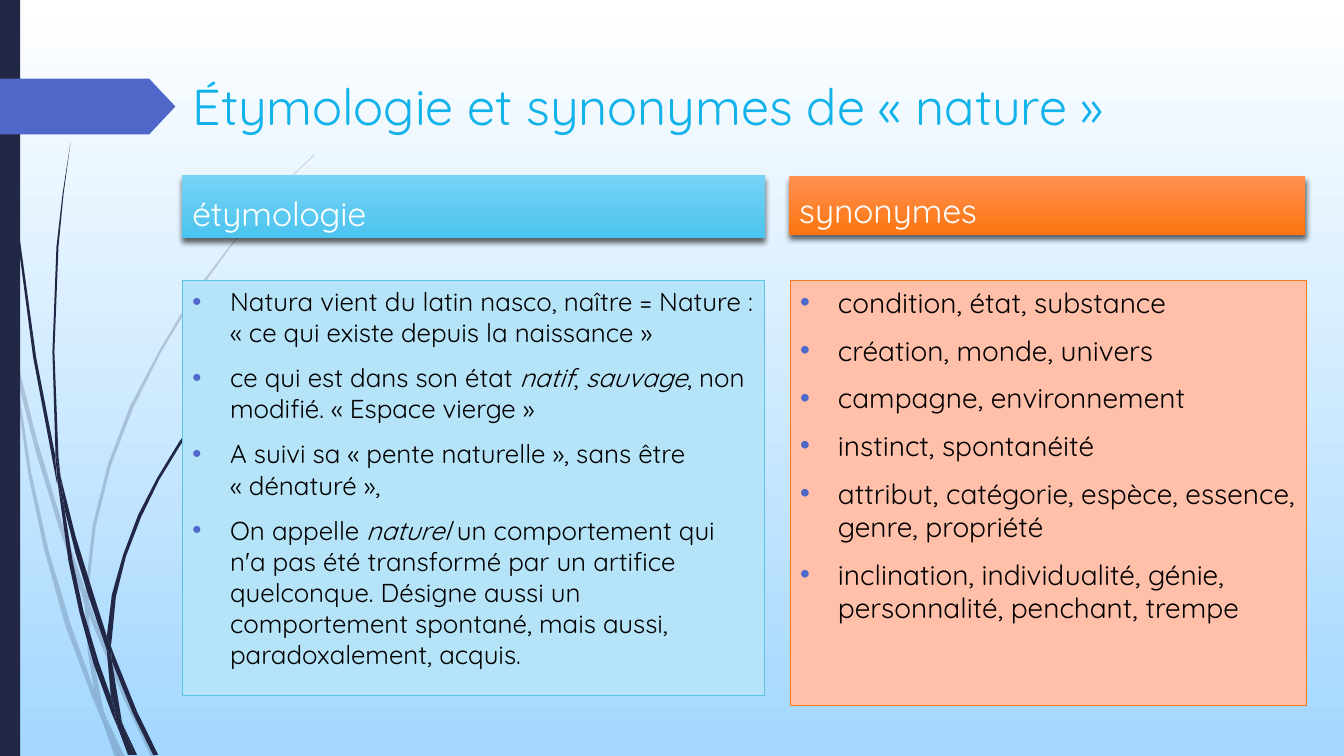
"""Build the slide on the etymology and synonyms of « nature »."""
from lxml import etree
from pptx import Presentation
from pptx.dml.color import RGBColor
from pptx.enum import shapes as kinds, text as te
from pptx.oxml import ns
from pptx.util import Pt

FONT = "Quicksand"
HARD = chr(160)
GRID = Pt(0.72)
NAVY = RGBColor(0x21, 0x27, 0x45)
INDIGO = RGBColor(0x4E, 0x67, 0xC8)
CYAN = RGBColor(0x12, 0xB2, 0xEB)
WHITE = RGBColor(0xFF, 0xFF, 0xFF)
BLACK = RGBColor(0, 0, 0)
SKY = (WHITE, RGBColor(0xA3, 0xD7, 0xFF))
BLUES = (RGBColor(0x78, 0xD3, 0xF5), RGBColor(0x4B, 0xC4, 0xEF))
REDS = (RGBColor(0xFF, 0x91, 0x51), RGBColor(0xFD, 0x75, 0x10))
ICE = RGBColor(0xB5, 0xE3, 0xF8)
ICE_EDGE = RGBColor(0x5A, 0xC3, 0xE8)
PEACH = RGBColor(0xFF, 0xBF, 0xA9)
PEACH_EDGE = RGBColor(0xF4, 0x7A, 0x20)

PALE_BLADES = [
    [(11, 350), (9, 322), (0, 282), (0, 299), (10, 344)],
    [(58, 522), (84, 599), (85, 586), (62, 520), (36, 434), (14, 345), (17, 376),
     (36, 450)],
    [(92, 607), (88, 596), (88, 610), (123, 694), (150, 751), (155, 751), (127, 692)],
    [(119, 751), (124, 751), (105, 711)],
    [(93, 683), (70, 619), (48, 545), (31, 469), (17, 376), (11, 350), (28, 470),
     (44, 546), (65, 621), (92, 693), (101, 714), (99, 707)],
    [(84, 599), (87, 646), (93, 683), (96, 692), (105, 711), (103, 706), (91, 646),
     (88, 610), (88, 608)],
    [(88, 584), (95, 522), (110, 462), (132, 405), (160, 349), (192, 296), (229, 245),
     (268, 198), (290, 175), (312, 154), (312, 153), (289, 175), (268, 197), (228, 244),
     (190, 294), (158, 348), (129, 403), (107, 461), (92, 521), (85, 584), (85, 586),
     (88, 596)],
    [(101, 714), (114, 751), (119, 751)],
    [(88, 608), (88, 610), (88, 596), (85, 586), (84, 599)],
    [(96, 692), (93, 683), (99, 707), (101, 714), (119, 751), (105, 711)],
]
DARK_BLADES = [
    [(7, 110), (17, 233), (33, 355), (56, 477), (57, 481), (55, 457), (55, 453),
     (36, 355), (19, 232), (8, 109), (5, 48), (4, 0), (3, 0), (4, 48)],
    [(88, 592), (106, 645), (106, 633), (106, 631), (93, 590), (75, 532), (60, 472),
     (64, 505), (75, 549)],
    [(113, 649), (110, 641), (111, 656), (132, 708), (152, 749), (157, 749), (136, 706)],
    [(110, 691), (98, 657), (83, 607), (72, 556), (64, 505), (57, 477), (68, 557),
     (79, 608), (93, 659), (111, 708), (117, 722), (116, 717)],
    [(60, 472), (58, 453), (54, 349), (58, 245), (63, 193), (70, 141), (62, 193),
     (56, 245), (52, 349), (55, 449)],
    [(133, 749), (136, 749), (122, 719)],
    [(57, 477), (64, 505), (60, 472), (55, 449), (55, 453)],
    [(111, 633), (115, 592), (125, 552), (140, 513), (158, 476), (180, 440), (205, 406),
     (231, 374), (245, 359), (261, 344), (260, 344), (245, 358), (231, 373), (204, 405),
     (178, 438), (156, 474), (137, 511), (122, 551), (111, 590), (106, 631), (110, 641)],
    [(117, 722), (127, 749), (131, 749)],
    [(106, 645), (110, 691), (116, 706), (122, 719), (121, 716), (111, 656), (109, 651)],
    [(106, 645), (109, 651), (111, 656), (110, 641), (106, 631), (106, 633)],
    [(116, 706), (110, 691), (116, 717), (117, 722), (130, 749), (133, 749), (122, 719)],
]
ORIGINS = [
    "Natura vient du latin nasco, naître = Nature : «~ce qui existe depuis la naissance~»",
    "ce qui est dans son état~*natif*, *sauvage*, non modifié. «~Espace vierge~»",
    "A suivi sa «~pente naturelle~», sans être «~dénaturé~»,",
    "On appelle *naturel~*un comportement qui n'a pas été transformé par un artifice "
    "quelconque. Désigne aussi un comportement spontané, mais aussi, paradoxalement, acquis.",
]
SYNONYMS = [
    "condition, état, substance",
    "création, monde, univers",
    "campagne,~environnement",
    "instinct, spontanéité",
    "attribut,~catégorie, espèce, essence, genre, propriété",
    "inclination, individualité, génie, personnalité, penchant, trempe",
]


def node(parent, tag, **attrs):
    """Append a DrawingML element to parent."""
    return etree.SubElement(parent, ns.qn(tag), attrs)


def shade(fill, stops):
    """Fill with a gradient that runs from top to bottom."""
    fill.gradient()
    fill.gradient_angle = 270
    for stop, tone in zip(fill.gradient_stops, stops):
        stop.color.rgb = tone


def paint(shape, tone, edge=None):
    """Give a shape a solid fill, an optional edge and no shadow."""
    shape.shadow.inherit = False
    shape.fill.solid()
    shape.fill.fore_color.rgb = tone
    if edge is None:
        shape.line.fill.background()
    else:
        shape.line.color.rgb = edge
        shape.line.width = Pt(0.75)


def block(slide, kind, box, tone, edge=None):
    """Add a filled preset shape."""
    shape = slide.shapes.add_shape(kind, *map(Pt, box))
    paint(shape, tone, edge)
    return shape


def bullet(para):
    """Give a paragraph a hanging round bullet."""
    props = para._p.get_or_add_pPr()
    props.set("marL", str(Pt(27)))
    props.set("indent", str(-Pt(27)))
    node(node(props, "a:buClr"), "a:srgbClr", val=str(INDIGO))
    node(props, "a:buFont", typeface="Arial")
    node(props, "a:buChar", char="•")


def write(shape, lines, size, tone, anchor=te.MSO_ANCHOR.TOP, before=0, dots=False):
    """Write paragraphs; asterisks enclose italics, a tilde is a hard space."""
    frame = shape.text_frame
    frame.word_wrap = True
    frame.auto_size = te.MSO_AUTO_SIZE.NONE
    frame.vertical_anchor = anchor
    for row, line in enumerate(lines):
        para = frame.add_paragraph() if row else frame.paragraphs[0]
        para.alignment = te.PP_ALIGN.LEFT
        para.space_before = Pt(before)
        if dots:
            bullet(para)
        for part, words in enumerate(line.replace("~", HARD).split("*")):
            run = para.add_run()
            run.text = words
            font = run.font
            font.name, font.size, font.color.rgb = FONT, Pt(size), tone
            if part % 2:
                font.italic = True


def blade(slide, rim, alpha=100):
    """Draw one piece of grass from its rim in grid units."""
    pen = slide.shapes.build_freeform(*rim[0], scale=GRID)
    pen.add_line_segments(rim[1:])
    shape = pen.convert_to_shape()
    paint(shape, NAVY)
    if alpha < 100:
        tone = shape._element.spPr.find(".//" + ns.qn("a:srgbClr"))
        node(tone, "a:alpha", val=str(alpha * 1000))


def banner(slide, box, stops, label):
    """Add a column heading with a gradient and a soft shadow."""
    shape = block(slide, kinds.MSO_SHAPE.RECTANGLE, box, stops[0])
    shade(shape.fill, stops)
    glow = node(shape._element.spPr.find(ns.qn("a:effectLst")), "a:outerShdw",
                blurRad=str(Pt(4)), dist=str(Pt(3)), dir="5400000",
                algn="ctr", rotWithShape="0")
    node(node(glow, "a:srgbClr", val="000000"), "a:alpha", val="60000")
    write(shape, [label], 24, WHITE, anchor=te.MSO_ANCHOR.BOTTOM, before=10)


def panel(slide, box, tone, edge, lines, size):
    """Add a column body with a bulleted list."""
    shape = block(slide, kinds.MSO_SHAPE.RECTANGLE, box, tone, edge)
    write(shape, lines, size, BLACK, before=10, dots=True)


def main():
    """Compose and save the slide."""
    deck = Presentation()
    deck.slide_width, deck.slide_height = Pt(960), Pt(540)
    slide = deck.slides.add_slide(deck.slide_layouts[5])
    shade(slide.background.fill, SKY)
    for rim in PALE_BLADES:
        blade(slide, rim, alpha=20)
    for rim in DARK_BLADES:
        blade(slide, rim)
    block(slide, kinds.MSO_SHAPE.RECTANGLE, (0, 0, 14.4, 540), NAVY)
    arrow = block(slide, kinds.MSO_SHAPE.PENTAGON, (0, 56.2, 125.3, 39.8), INDIGO)
    arrow.adjustments[0] = 0.47

    title = slide.shapes.title
    title.left, title.top, title.width, title.height = map(Pt, (130.3, 50, 702, 61.2))
    write(title, ["Étymologie et synonymes de «~nature~»"], 36, CYAN)

    banner(slide, (130.3, 124.9, 416, 45.2), BLUES, "étymologie")
    panel(slide, (130.3, 200.4, 416, 296.2), ICE, ICE_EDGE, ORIGINS, 18.5)
    banner(slide, (563.8, 125.6, 368.7, 42.4), REDS, "synonymes")
    panel(slide, (564.5, 200.4, 369, 303.6), PEACH, PEACH_EDGE, SYNONYMS, 20)
    deck.save("out.pptx")


if __name__ == "__main__":
    main()
